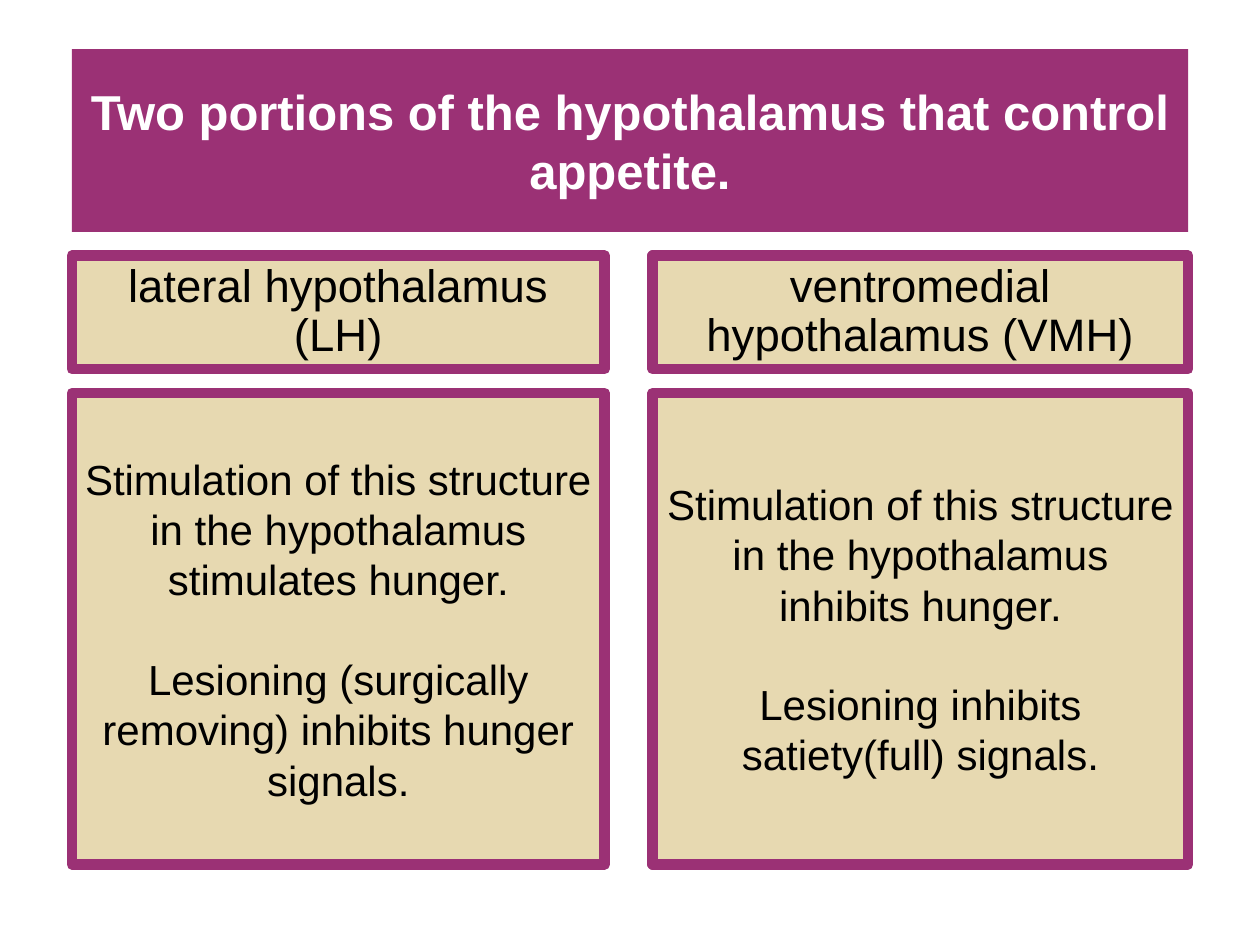
from dataclasses import dataclass

from pptx import Presentation
from pptx.dml.color import RGBColor
from pptx.enum.shapes import MSO_SHAPE
from pptx.enum.text import MSO_ANCHOR, MSO_AUTO_SIZE, PP_ALIGN
from pptx.util import Inches, Pt

RECTANGLE = MSO_SHAPE.RECTANGLE
MIDDLE = MSO_ANCHOR.MIDDLE
CENTER = PP_ALIGN.CENTER
NO_AUTOFIT = MSO_AUTO_SIZE.NONE
TITLE_ONLY = 5


@dataclass(frozen=True)
class Theme:
    font: str = "Arial"
    plum: RGBColor = RGBColor(0x9B, 0x31, 0x75)
    sand: RGBColor = RGBColor(0xE7, 0xD9, 0xB1)
    white: RGBColor = RGBColor(0xFF, 0xFF, 0xFF)
    black: RGBColor = RGBColor(0x00, 0x00, 0x00)
    title_size: int = 28
    heading_size: int = 26
    body_size: int = 24
    border: int = 6
    paragraph_gap: int = 28


class SlideBuilder:
    def __init__(self, slide, theme):
        self.slide = slide
        self.theme = theme

    def add_text(self, shape, paragraphs, size, color, bold=False, line_spacing=1.0):
        frame = shape.text_frame
        frame.word_wrap = True
        frame.auto_size = NO_AUTOFIT
        frame.vertical_anchor = MIDDLE
        for index, text in enumerate(paragraphs):
            paragraph = frame.add_paragraph() if index else frame.paragraphs[0]
            paragraph.alignment = CENTER
            paragraph.line_spacing = line_spacing
            paragraph.space_before = Pt(self.theme.paragraph_gap if index else 0)
            run = paragraph.add_run()
            run.text = text
            run.font.name = self.theme.font
            run.font.size = Pt(size)
            run.font.bold = bold
            run.font.color.rgb = color

    def title(self, text, left, top, width, height):
        banner = self.slide.shapes.title
        banner.left, banner.top = Inches(left), Inches(top)
        banner.width, banner.height = Inches(width), Inches(height)
        banner.fill.solid()
        banner.fill.fore_color.rgb = self.theme.plum
        self.add_text(banner, [text], self.theme.title_size, self.theme.white, bold=True)

    def panel(self, paragraphs, left, top, width, height, size, line_spacing=1.0):
        panel = self.slide.shapes.add_shape(
            RECTANGLE, Inches(left), Inches(top), Inches(width), Inches(height))
        panel.shadow.inherit = False
        panel.fill.solid()
        panel.fill.fore_color.rgb = self.theme.sand
        panel.line.color.rgb = self.theme.plum
        panel.line.width = Pt(self.theme.border)
        self.add_text(panel, paragraphs, size, self.theme.black, line_spacing=line_spacing)


def main():
    theme = Theme()
    presentation = Presentation()
    presentation.slide_width, presentation.slide_height = Inches(10), Inches(7.5)
    slide = presentation.slides.add_slide(presentation.slide_layouts[TITLE_ONLY])
    builder = SlideBuilder(slide, theme)

    builder.title("Two portions of the hypothalamus that control appetite.",
                  0.57, 0.39, 8.86, 1.45)

    regions = [
        (0.57, 4.23, "lateral hypothalamus (LH)", [
            "Stimulation of this structure in the hypothalamus stimulates hunger.",
            "Lesioning (surgically removing) inhibits hunger signals.",
        ]),
        (5.18, 4.25, "ventromedial hypothalamus (VMH)", [
            "Stimulation of this structure in the hypothalamus inhibits hunger.",
            "Lesioning inhibits satiety(full) signals.",
        ]),
    ]
    for left, width, heading, effects in regions:
        builder.panel([heading], left, 2.03, width, 0.9, theme.heading_size, 0.9)
        builder.panel(effects, left, 3.12, width, 3.74, theme.body_size)

    presentation.save("out.pptx")


if __name__ == "__main__":
    main()
